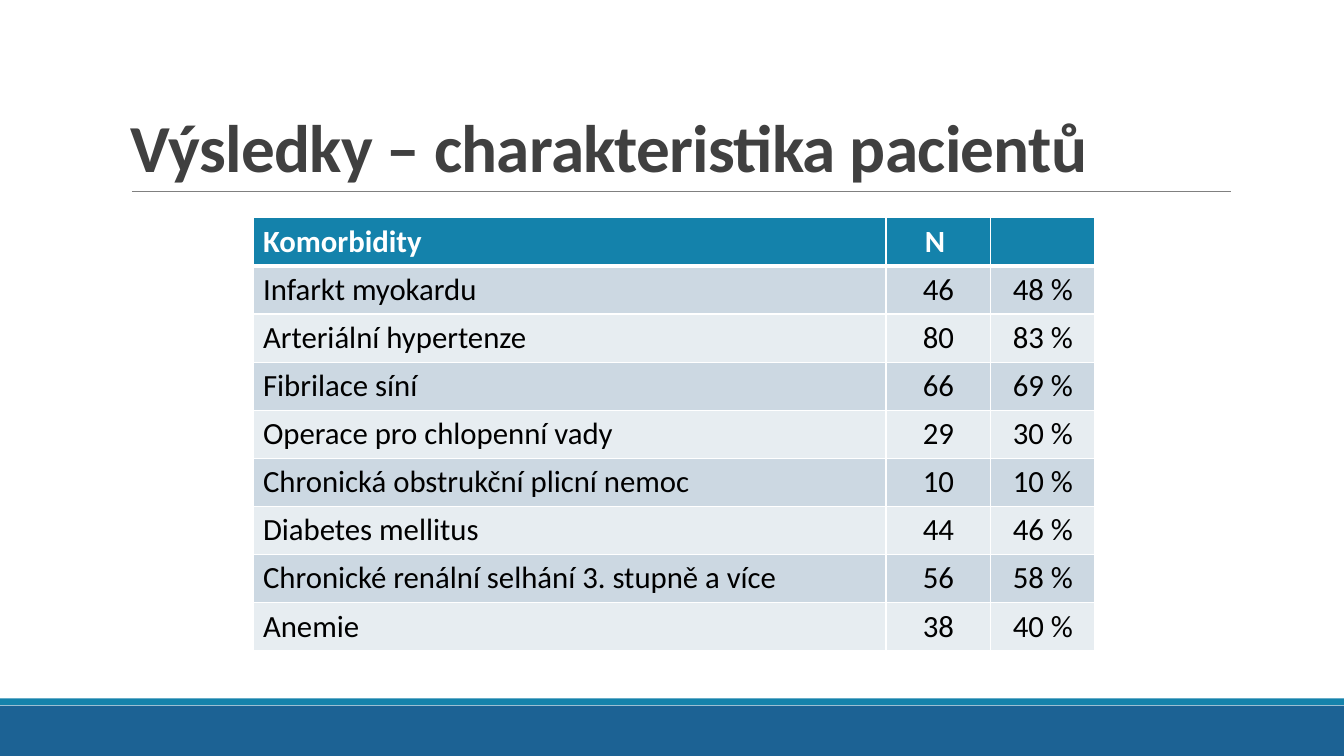
"""Build the slide with the table of patient comorbidities."""
from lxml import etree
from pptx import Presentation
from pptx.dml.color import RGBColor
from pptx.enum.shapes import MSO_CONNECTOR, MSO_SHAPE
from pptx.enum.text import MSO_ANCHOR, PP_ALIGN
from pptx.oxml.ns import qn
from pptx.util import Pt

LEFT, CENTER = PP_ALIGN.LEFT, PP_ALIGN.CENTER
BOTTOM = MSO_ANCHOR.BOTTOM
RECTANGLE = MSO_SHAPE.RECTANGLE
STRAIGHT = MSO_CONNECTOR.STRAIGHT

FONT = "Calibri"
COLORS = {
    "footer": "1C6294",
    "accent": "1482AB",
    "rule": "808080",
    "title": "404040",
    "white": "FFFFFF",
    "black": "000000",
    "odd_row": "CCD8E2",
    "even_row": "E7EDF1",
}
SLIDE_WIDTH, SLIDE_HEIGHT = 960, 540
COLUMN_WIDTHS = (452.2, 74.9, 74.2)
ROW_HEIGHT = 34.4
ROWS = (
    ("Komorbidity", "N ", ""),
    ("Infarkt myokardu", "46", "48 %"),
    ("Arteriální hypertenze", "80", "83 %"),
    ("Fibrilace síní", "66", "69 %"),
    ("Operace pro chlopenní vady", "29", "30 %"),
    ("Chronická obstrukční plicní nemoc", "10", "10 %"),
    ("Diabetes mellitus", "44", "46 %"),
    ("Chronické renální selhání 3. stupně a více", "56", "58 %"),
    ("Anemie", "38", "40 %"),
)


def color(name):
    """Return the named colour."""
    return RGBColor.from_string(COLORS[name])


def write_text(frame, text, *, size, color_name, bold=False, align=LEFT,
               line_spacing=None, tracking=None):
    """Write one formatted paragraph into a text frame."""
    paragraph = frame.paragraphs[0]
    paragraph.alignment = align
    paragraph.line_spacing = line_spacing
    run = paragraph.add_run()
    run.text = text
    run.font.name = FONT
    run.font.size = Pt(size)
    run.font.bold = bold
    run.font.color.rgb = color(color_name)
    if tracking is not None:
        run.font._element.set("spc", str(round(tracking * 100)))


def add_band(slide, top, height, color_name):
    """Add a full-width coloured band."""
    shape = slide.shapes.add_shape(
        RECTANGLE, Pt(0), Pt(top), Pt(SLIDE_WIDTH), Pt(height))
    shape.shadow.inherit = False
    shape.fill.solid()
    shape.fill.fore_color.rgb = color(color_name)
    shape.line.fill.background()


def add_rule(slide, left, right, top):
    """Add the thin horizontal rule below the title."""
    connector = slide.shapes.add_connector(
        STRAIGHT, Pt(left), Pt(top), Pt(right), Pt(top))
    connector.line.color.rgb = color("rule")
    connector.line.width = Pt(0.5)
    etree.SubElement(connector._element.spPr, qn("a:effectLst"))


def add_title(slide, text):
    """Add the slide title, resting on the rule."""
    box = slide.shapes.add_textbox(Pt(86.4), Pt(22.3), Pt(792), Pt(114.5))
    frame = box.text_frame
    frame.word_wrap = True
    frame.vertical_anchor = BOTTOM
    write_text(frame, text, size=48, color_name="title", bold=True,
               line_spacing=0.85, tracking=-0.5)


def set_borders(cell, bottom_width, top_width):
    """Give a cell white borders on all four sides."""
    properties = cell._tc.get_or_add_tcPr()
    widths = {"lnL": 1, "lnR": 1, "lnT": top_width, "lnB": bottom_width}
    for side, width in widths.items():
        line = etree.SubElement(properties, qn(f"a:{side}"), w=str(Pt(width)))
        fill = etree.SubElement(line, qn("a:solidFill"))
        etree.SubElement(fill, qn("a:srgbClr"), val=COLORS["white"])


def add_comorbidity_table(slide, left, top):
    """Add the table with a header row and alternating row fills."""
    table = slide.shapes.add_table(
        len(ROWS), len(COLUMN_WIDTHS), Pt(left), Pt(top),
        Pt(sum(COLUMN_WIDTHS)), Pt(ROW_HEIGHT * len(ROWS))).table
    for column, width in zip(table.columns, COLUMN_WIDTHS):
        column.width = Pt(width)
    for row_index, values in enumerate(ROWS):
        table.rows[row_index].height = Pt(ROW_HEIGHT)
        header = row_index == 0
        stripe = "odd_row" if row_index % 2 else "even_row"
        for column_index, value in enumerate(values):
            cell = table.cell(row_index, column_index)
            set_borders(cell, bottom_width=3 if header else 1,
                        top_width=3 if row_index == 1 else 1)
            cell.fill.solid()
            cell.fill.fore_color.rgb = color("accent" if header else stripe)
            if value:
                write_text(cell.text_frame, value, size=22, bold=header,
                           color_name="white" if header else "black",
                           align=CENTER if column_index else LEFT)


def main():
    """Build and save the presentation."""
    presentation = Presentation()
    presentation.slide_width = Pt(SLIDE_WIDTH)
    presentation.slide_height = Pt(SLIDE_HEIGHT)
    slide = presentation.slides.add_slide(presentation.slide_layouts[6])
    add_band(slide, 504, 36, "footer")
    add_band(slide, 498.8, 5, "accent")
    add_rule(slide, 94.3, 879, 136.8)
    add_title(slide, "Výsledky – charakteristika pacientů")
    add_comorbidity_table(slide, 180.7, 155.5)
    presentation.save("out.pptx")


if __name__ == "__main__":
    main()
